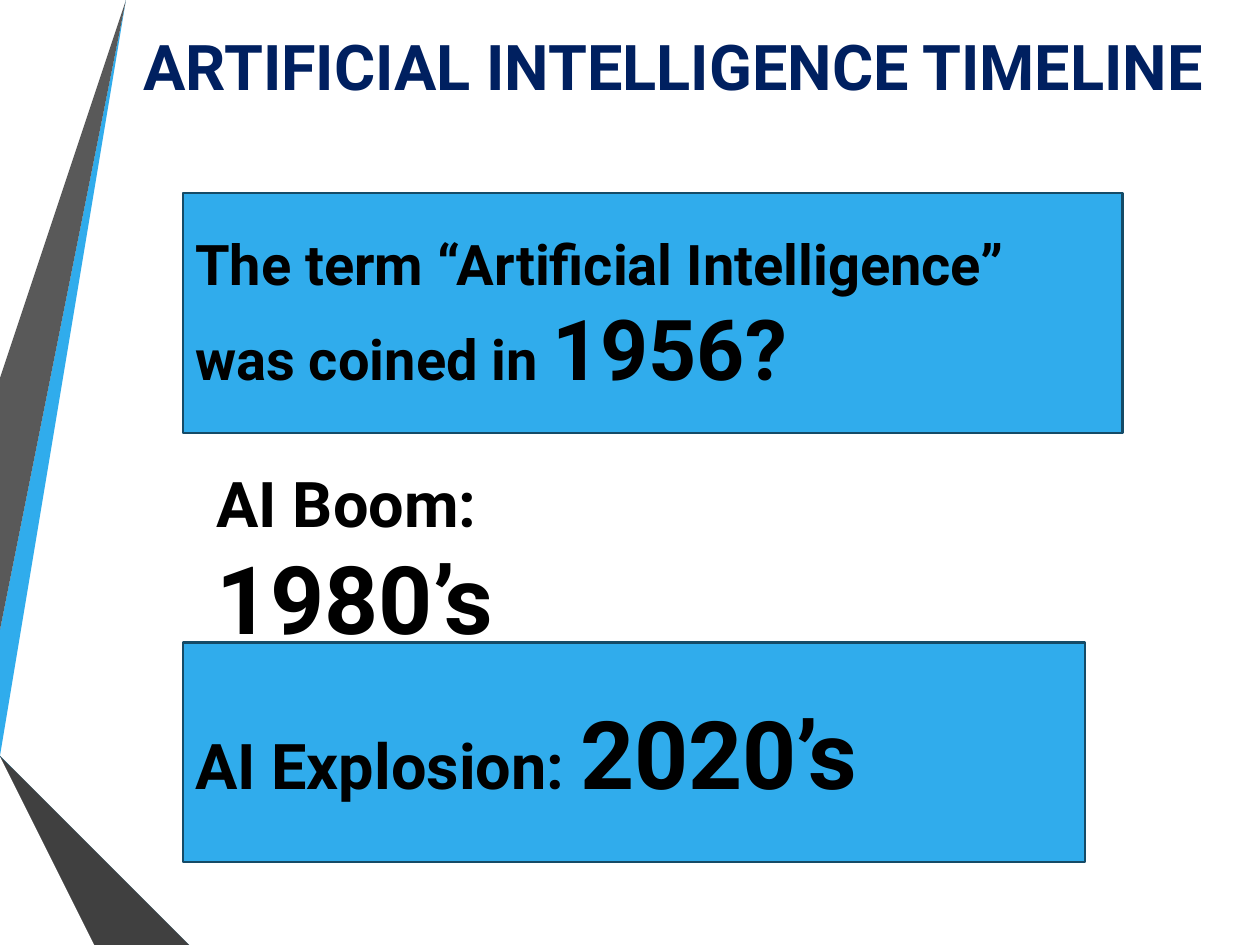
import pptx
import pptx.dml.color
import pptx.enum.shapes
import pptx.enum.text
import pptx.util
from pptx.util import Inches

FONT = "Roboto"
BLUE = "30ACEC"
RIBBONS = [
    (BLUE, [(0, 5.44), (0, 5.75), (0.22, 5.79), (1.17, 0), (0.89, 0)]),
    ("595959", [(0.83, 0), (0.55, 0), (0, 3.36), (0, 5.06)]),
    ("262626", [(0, 6.19), (0, 6.21), (0.93, 7.5), (0.99, 7.5)]),
    ("0C5A82", [(0, 5.79), (0, 5.8), (1.56, 7.5), (1.63, 7.5)]),
    ("1287C3", [(0, 5.79), (1.63, 7.5), (2.33, 7.5), (0.22, 5.79), (0, 5.75)]),
    ("404040", [(0, 6.19), (0.99, 7.5), (1.51, 7.5), (0, 5.86)]),
]


def color(hex_code):
    """Return the colour for a hex string."""
    return pptx.dml.color.RGBColor.from_string(hex_code)


def box_of(left, top, width, height):
    """Return a box in inches as lengths."""
    return [Inches(value) for value in (left, top, width, height)]


def add_run(paragraph, text, size, hex_code="000000", bold=True):
    """Append formatted text to a paragraph."""
    run = paragraph.add_run()
    run.text = text
    run.font.name = FONT
    run.font.size = pptx.util.Pt(size)
    run.font.bold = bold
    run.font.color.rgb = color(hex_code)


def add_ribbons(slide, left, top):
    """Draw the folded ribbons from the given corner."""
    for hex_code, points in RIBBONS:
        placed = [(left + x, top + y) for x, y in points]
        builder = slide.shapes.build_freeform(*placed[0], scale=Inches(1))
        builder.add_line_segments(placed[1:], close=True)
        ribbon = builder.convert_to_shape()
        ribbon.shadow.inherit = False
        ribbon.fill.solid()
        ribbon.fill.fore_color.rgb = color(hex_code)
        ribbon.line.fill.background()


def set_title(slide, box, text):
    """Place and format the slide title."""
    title = slide.shapes.title
    title.left, title.top, title.width, title.height = box
    frame = title.text_frame
    frame.word_wrap = True
    frame.auto_size = pptx.enum.text.MSO_AUTO_SIZE.NONE
    frame.vertical_anchor = pptx.enum.text.MSO_ANCHOR.TOP
    heading = frame.paragraphs[0]
    heading.alignment = pptx.enum.text.PP_ALIGN.CENTER
    add_run(heading, text, size=36, hex_code="002060")


def add_milestone(slide, box, label, date, label_size=36, date_size=54, panel=True):
    """Add a timeline entry, on a blue panel or as plain text."""
    if panel:
        entry = slide.shapes.add_shape(pptx.enum.shapes.MSO_SHAPE.RECTANGLE, *box)
        entry.shadow.inherit = False
        entry.fill.solid()
        entry.fill.fore_color.rgb = color(BLUE)
        entry.line.color.rgb = color("154B67")
        entry.line.width = pptx.util.Pt(1.25)
        entry.text_frame.vertical_anchor = pptx.enum.text.MSO_ANCHOR.MIDDLE
    else:
        entry = slide.shapes.add_textbox(*box)
    entry.text_frame.word_wrap = True
    line = entry.text_frame.paragraphs[0]
    line.alignment = pptx.enum.text.PP_ALIGN.LEFT
    add_run(line, label, size=label_size)
    add_run(line, date, size=date_size)


def main():
    """Build the timeline slide and save it."""
    deck = pptx.Presentation()
    deck.slide_width, deck.slide_height = Inches(10), Inches(7.5)
    slide = deck.slides.add_slide(deck.slide_layouts.get_by_name("Title Only"))
    add_ribbons(slide, 0, 0)
    set_title(slide, box_of(0.81, 0.17, 9.07, 0.71), "ARTIFICIAL INTELLIGENCE TIMELINE")
    add_milestone(slide, box_of(1.62, 3.64, 4.37, 1.31), "AI Boom: ", "1980’s", panel=False)
    add_milestone(slide, box_of(1.45, 1.53, 7.46, 1.91),
                  "The term “Artificial Intelligence” was coined in ", "1956?",
                  label_size=32, date_size=48)
    add_milestone(slide, box_of(1.45, 5.1, 7.16, 1.74), "AI Explosion: ", "2020’s")
    deck.save("out.pptx")


if __name__ == "__main__":
    main()
